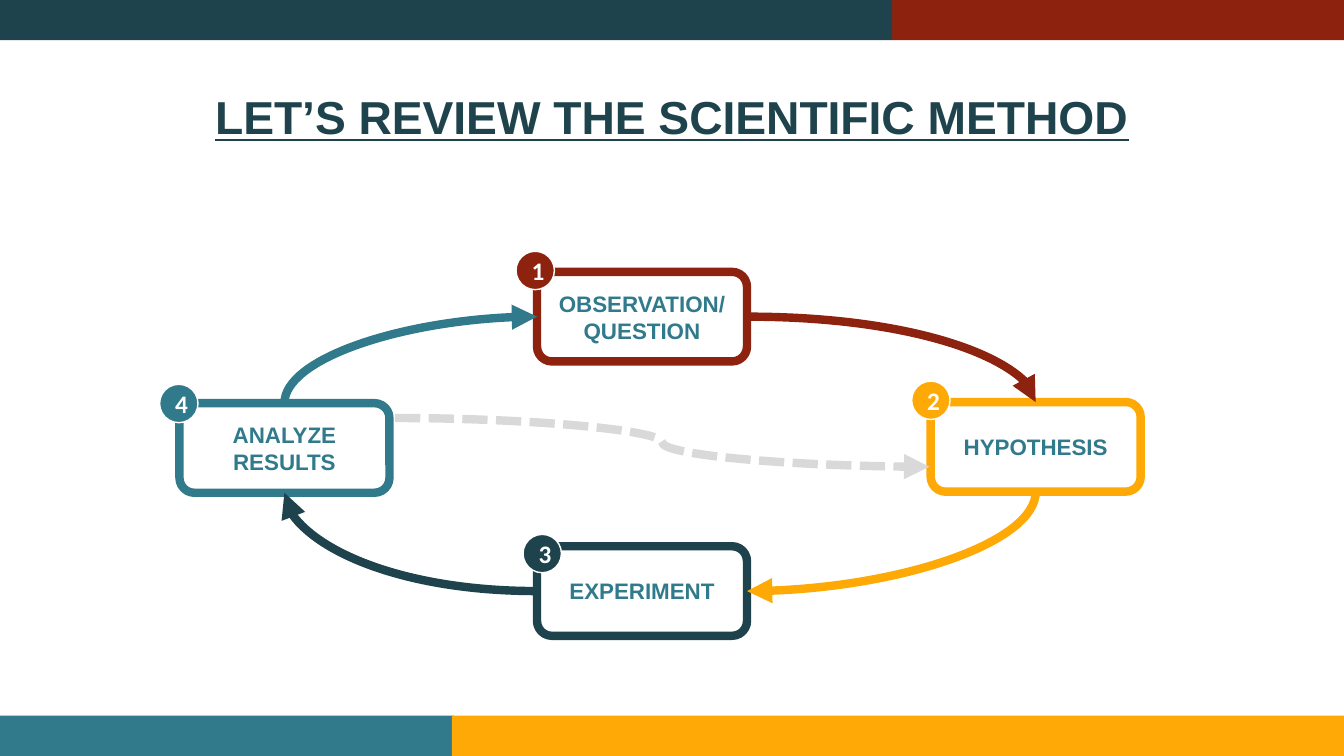
from lxml import etree
from pptx import Presentation
from pptx.dml.color import RGBColor
from pptx.enum import dml, shapes, text
from pptx.oxml import ns
from pptx.util import Pt

RED = RGBColor(0x8D, 0x23, 0x0F)
NAVY = RGBColor(0x1E, 0x43, 0x4C)
TEAL = RGBColor(0x30, 0x7A, 0x8C)
AMBER = RGBColor(0xFE, 0xA9, 0x05)
GREY = RGBColor(0xD9, 0xD9, 0xD9)
WHITE = RGBColor(0xFF, 0xFF, 0xFF)

WIDTH, HEIGHT = 960, 540
BAR = 28.8
STEP_W, STEP_H = 150, 64
BADGE = 27.4
TOP, LEFT, BOTTOM, RIGHT = range(4)


class MethodSlide:
    stroke = 6
    inset = 7.2

    def __init__(self, slide):
        self.slide = slide

    def label(self, shape, wording, font_name, size, color):
        frame = shape.text_frame
        frame.text = wording
        for paragraph in frame.paragraphs:
            paragraph.alignment = text.PP_ALIGN.CENTER
            font = paragraph.font
            font.name, font.size, font.bold = font_name, Pt(size), True
            font.color.rgb = color
        return frame

    def pad(self, frame):
        frame.word_wrap = True
        frame.margin_left = frame.margin_right = Pt(self.inset)
        frame.margin_top = frame.margin_bottom = Pt(self.inset)

    def title(self, wording, left, top, width, height):
        title = self.slide.shapes.title
        title.left, title.top = Pt(left), Pt(top)
        title.width, title.height = Pt(width), Pt(height)
        frame = self.label(title, wording, "Arial", 33, NAVY)
        frame.paragraphs[0].font.underline = True
        frame.vertical_anchor = text.MSO_ANCHOR.TOP
        frame.auto_size = text.MSO_AUTO_SIZE.SHAPE_TO_FIT_TEXT
        self.pad(frame)

    def shape(self, kind, left, top, width, height, fill, line=None, weight=0):
        shape = self.slide.shapes.add_shape(
            kind, Pt(left), Pt(top), Pt(width), Pt(height))
        shape.shadow.inherit = False
        shape.fill.solid()
        shape.fill.fore_color.rgb = fill
        if line is None:
            shape.line.fill.background()
        else:
            shape.line.color.rgb = line
            shape.line.width = Pt(weight)
        return shape

    def bar(self, left, top, width, color):
        self.shape(shapes.MSO_SHAPE.RECTANGLE, left, top, width, BAR, color)

    def step(self, wording, left, top, color):
        box = self.shape(shapes.MSO_SHAPE.ROUNDED_RECTANGLE, left, top,
                         STEP_W, STEP_H, WHITE, color, self.stroke)
        frame = self.label(box, wording, "Arial", 16, TEAL)
        frame.vertical_anchor = text.MSO_ANCHOR.MIDDLE
        self.pad(frame)
        return box

    def badge(self, number, left, top, color):
        disc = self.shape(shapes.MSO_SHAPE.OVAL, left, top,
                          BADGE, BADGE, color, WHITE, 1)
        frame = self.label(disc, str(number), "Calibri", 18, WHITE)
        frame.vertical_anchor = text.MSO_ANCHOR.MIDDLE

    def curve(self, start, end, color, dash=None):
        arrow = self.slide.shapes.add_connector(
            shapes.MSO_CONNECTOR.CURVE, *map(Pt, start + end))
        arrow.line.color.rgb = color
        arrow.line.width = Pt(self.stroke)
        if dash is not None:
            arrow.line.dash_style = dash
        properties = arrow.element.spPr
        outline = properties.find(ns.qn("a:ln"))
        etree.SubElement(outline, ns.qn("a:tailEnd"), type="triangle")
        etree.SubElement(properties, ns.qn("a:effectLst"))
        return arrow

    def arc(self, source, source_side, target, target_side, color):
        """Quarter curve from one step to the next."""
        arrow = self.curve((0, 0), (0, 0), color)
        arrow.begin_connect(source, source_side)
        arrow.end_connect(target, target_side)
        properties = arrow.element.spPr
        properties.find(ns.qn("a:prstGeom")).set("prst", "curvedConnector2")
        if source_side in (LEFT, RIGHT):
            return
        # A curve that leaves vertically is a quarter-turned box
        dx = arrow.end_x - arrow.begin_x
        dy = arrow.end_y - arrow.begin_y
        center_x, center_y = arrow.begin_x + dx // 2, arrow.begin_y + dy // 2
        arrow.width, arrow.height = abs(dy), abs(dx)
        arrow.left = center_x - abs(dy) // 2
        arrow.top = center_y - abs(dx) // 2
        frame = properties.find(ns.qn("a:xfrm"))
        frame.set("rot", "5400000")
        frame.set("flipH", str(int(dy < 0)))
        frame.set("flipV", str(int(dx > 0)))


def main():
    deck = Presentation()
    deck.slide_width, deck.slide_height = Pt(WIDTH), Pt(HEIGHT)
    page = MethodSlide(deck.slides.add_slide(deck.slide_layouts[5]))

    # Colour bars along both edges
    page.bar(637.2, 0, WIDTH - 637.2, RED)
    page.bar(0, 0, 637.2, NAVY)
    page.bar(0, HEIGHT - BAR, 324, TEAL)
    page.bar(322.8, HEIGHT - BAR, WIDTH - 322.8, AMBER)

    page.title("LET’S REVIEW THE SCIENTIFIC METHOD", 141, 56.2, 678, 54.7)

    # Steps of the cycle: wording, box position, badge position, colour
    cycle = [
        ("OBSERVATION/\nQUESTION", (383.6, 194.2), (368.6, 179.5), RED),
        ("HYPOTHESIS", (664.8, 287.2), (651.2, 272.2), AMBER),
        ("EXPERIMENT", (383.6, 390.2), (373.6, 381.7), NAVY),
        ("ANALYZE RESULTS", (128.2, 288), (114, 274.5), TEAL),
    ]
    steps = [page.step(wording, *place, color)
             for wording, place, _, color in cycle]

    # Arrows around the cycle, in the colour of the step they leave
    sides = [(RIGHT, TOP), (BOTTOM, RIGHT), (LEFT, BOTTOM), (TOP, LEFT)]
    for index, (leave, enter) in enumerate(sides):
        following = steps[(index + 1) % len(steps)]
        page.arc(steps[index], leave, following, enter, cycle[index][3])

    # Dashed way back from the results to the hypothesis
    page.curve((282.2, 298.6), (663.8, 333.4), GREY, dml.MSO_LINE.SQUARE_DOT)

    # Step numbers
    for number, (_, _, place, color) in enumerate(cycle, 1):
        page.badge(number, *place, color)

    deck.save("out.pptx")


if __name__ == "__main__":
    main()
